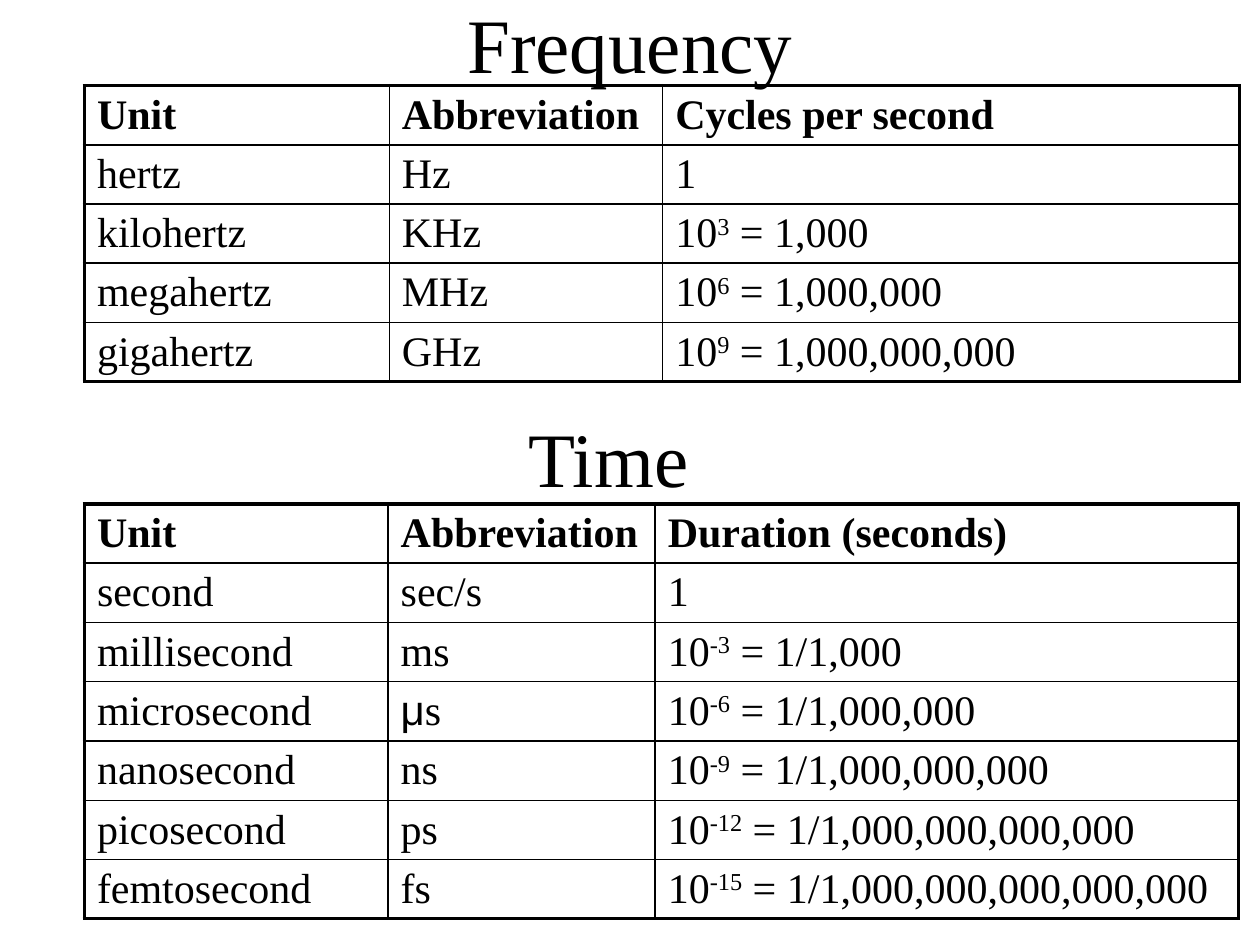
"""Build a slide of frequency and time units."""
from dataclasses import dataclass

from lxml.etree import Element, SubElement
from pptx import Presentation
from pptx.dml.color import RGBColor
from pptx.enum.text import MSO_ANCHOR as Anchor, MSO_AUTO_SIZE as Fit, PP_ALIGN as Align
from pptx.oxml.ns import qn
from pptx.util import Inches, Pt

FACE = "Times New Roman"
INK = "000000"
LEFT, ROW = 0.67, 0.47
THIN, THICK = 1, 2.25


@dataclass
class Unit:
    """A unit and its power of ten."""
    name: str
    abbr: str
    power: int


@dataclass
class Chart:
    """A table of units."""
    top: float
    cols: tuple[float, ...]
    head: str
    units: list[Unit]


FREQ = Chart(0.68, (2.42, 2.17, 4.58), "Cycles per second", [
    Unit("hertz", "Hz", 0),
    Unit("kilohertz", "KHz", 3),
    Unit("megahertz", "MHz", 6),
    Unit("gigahertz", "GHz", 9),
])
TIME = Chart(4, (2.41, 2.12, 4.63), "Duration (seconds)", [
    Unit("second", "sec/s", 0),
    Unit("millisecond", "ms", -3),
    Unit("microsecond", "μs", -6),
    Unit("nanosecond", "ns", -9),
    Unit("picosecond", "ps", -12),
    Unit("femtosecond", "fs", -15),
])


def style(para, size: float, bold: bool = False) -> None:
    """Set the font of a paragraph."""
    font = para.font
    font.name, font.size, font.bold = FACE, Pt(size), bold
    font.color.rgb = RGBColor.from_string(INK)


def title(shape, text: str, left: float, top: float, width: float, height: float) -> None:
    """Place and write a heading."""
    shape.left, shape.top = Inches(left), Inches(top)
    shape.width, shape.height = Inches(width), Inches(height)
    frame = shape.text_frame
    frame.word_wrap, frame.auto_size = True, Fit.NONE
    frame.vertical_anchor = Anchor.MIDDLE
    para = frame.paragraphs[0]
    para.text, para.alignment = text, Align.CENTER
    style(para, 44)


def border(cell, edges: dict[str, float]) -> None:
    """Draw the four edges of a cell."""
    props = cell._tc.get_or_add_tcPr()
    for spot, (side, width) in enumerate(edges.items()):
        line = Element(qn(f"a:ln{side}"), w=str(Pt(width)))
        fill = SubElement(line, qn("a:solidFill"))
        SubElement(fill, qn("a:srgbClr"), val=INK)
        props.insert(spot, line)


def value(power: int) -> list[str]:
    """Split a power of ten into base, exponent and result."""
    if power == 0:
        return ["1"]
    sign = "1/" if power < 0 else ""
    return ["10", str(power), f" = {sign}{10 ** abs(power):,}"]


def split(abbr: str) -> list[str]:
    """Part the Greek prefix from its unit."""
    return ["μ", abbr[1:]] if abbr.startswith("μ") else [abbr]


def write(cell, parts: list[str], bold: bool) -> None:
    """Write the parts of a cell, raising an exponent."""
    para = cell.text_frame.paragraphs[0]
    style(para, 24, bold)
    for spot, part in enumerate(parts):
        run = para.add_run()
        run.text = part
        if part == "μ":
            run.font.name = "Arial"
        if len(parts) == 3 and spot == 1:
            run.font._element.set("baseline", "30000")


def draw(slide, chart: Chart) -> None:
    """Draw a table of units."""
    rows = [[["Unit"], ["Abbreviation"], [chart.head]]]
    rows += [[[u.name], split(u.abbr), value(u.power)] for u in chart.units]
    high, wide = len(rows), len(chart.cols)
    table = slide.shapes.add_table(
        high, wide, Inches(LEFT), Inches(chart.top),
        Inches(sum(chart.cols)), Inches(ROW * high)).table
    table.first_row = table.horz_banding = False
    for col, width in zip(table.columns, chart.cols):
        col.width = Inches(width)
    for y, row in enumerate(rows):
        for x, parts in enumerate(row):
            cell = table.cell(y, x)
            cell.fill.background()
            outer = {"L": x == 0, "R": x == wide - 1, "T": y == 0, "B": y == high - 1}
            border(cell, {side: THICK if out else THIN for side, out in outer.items()})
            write(cell, parts, y == 0)


def main() -> None:
    """Build and save the slide."""
    deck = Presentation()
    deck.slide_width, deck.slide_height = Inches(10), Inches(7.5)
    slide = deck.slides.add_slide(deck.slide_layouts[5])
    title(slide.shapes.title, "Frequency", 0.75, 0, 8.5, 0.67)
    draw(slide, FREQ)
    box = slide.shapes.add_textbox(0, 0, 0, 0)
    title(box, "Time", 0.58, 3, 8.5, 1.25)
    draw(slide, TIME)
    deck.save("out.pptx")


if __name__ == "__main__":
    main()
